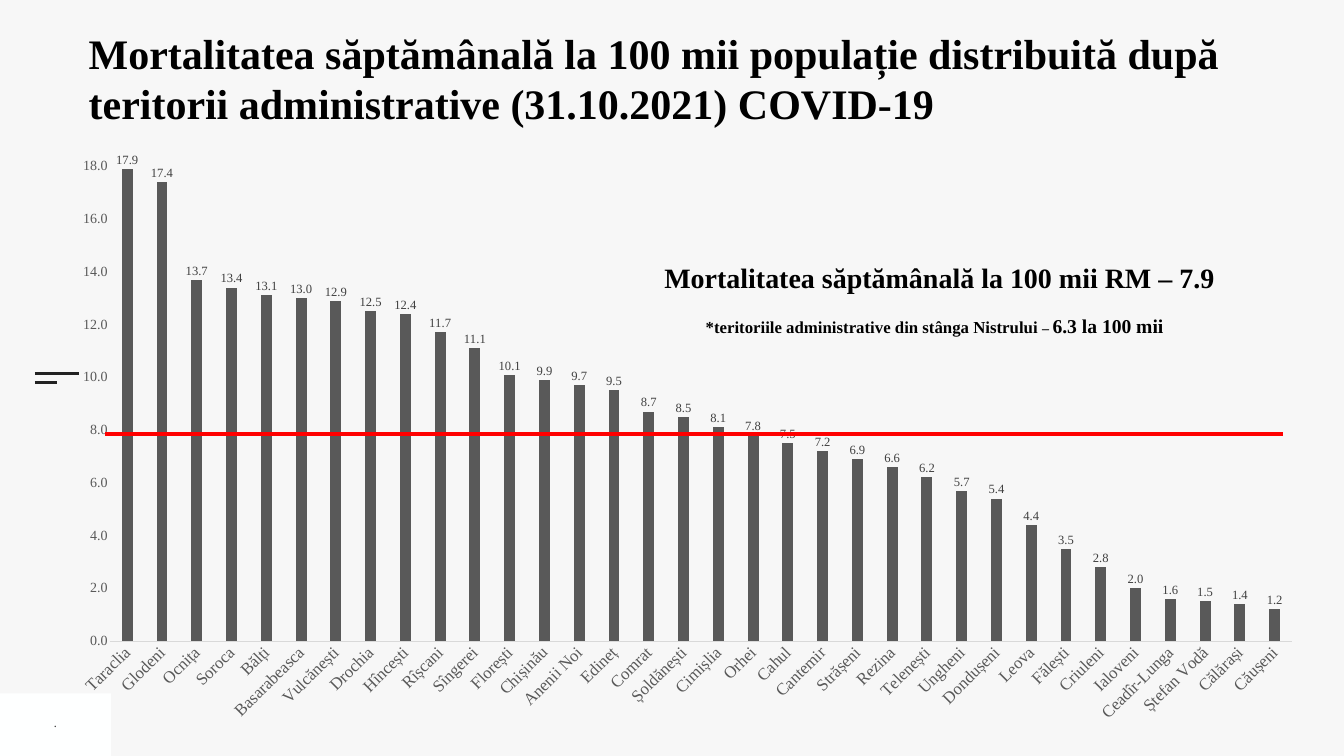
from dataclasses import dataclass

import lxml.etree
import pptx
import pptx.chart.data
import pptx.dml.color
import pptx.enum.chart
import pptx.enum.shapes
import pptx.enum.text
import pptx.oxml
import pptx.oxml.ns
import pptx.util
from pptx.util import Inches

COLORS = {
    "background": "F7F7F7", "corner": "FEFFFF", "mark": "222222",
    "text": "000000", "bar": "595959", "label": "404040",
    "axis": "D9D9D9", "average": "FF0000",
}
SERIF = "Times New Roman"
SANS = "Open Sans"


@dataclass
class Rule:
    left: float
    right: float
    y: float
    color: str
    width: float


@dataclass
class Run:
    text: str
    size: float


@dataclass
class Caption:
    left: float
    top: float
    width: float
    height: float
    runs: list[Run]
    wrap: bool = True
    font: str = SERIF
    color: str = "text"
    bold: bool = True
    inset: float = 0.05


RULES = [
    Rule(0.69, 1.57, 7.41, "mark", 3),
    Rule(0.69, 1.13, 7.59, "mark", 3),
]
AVERAGE = Rule(2.09, 25.46, 8.61, "average", 4.5)

CAPTIONS = [
    Caption(0.97, 14.11, 0.26, 0.47, [Run(".", 16)], False, SANS, "mark", False, 0.1),
    Caption(13.02, 5.12, 11.24, 0.77,
            [Run("Mortalitatea săptămânală la 100 mii RM – 7.9", 40)], False),
    Caption(11.88, 6.18, 13.33, 0.57, [
        Run("*teritoriile administrative din stânga Nistrului ", 24),
        Run("– ", 20),
        Run("6.3 la 100 mii", 28),
    ]),
]

MORTALITY = {
    "Taraclia": 17.9, "Glodeni": 17.4, "Ocnița": 13.7, "Soroca": 13.4,
    "Bălți": 13.1, "Basarabeasca": 13.0, "Vulcănești": 12.9, "Drochia": 12.5,
    "Hîncești": 12.4, "Rîșcani": 11.7, "Sîngerei": 11.1, "Florești": 10.1,
    "Chișinău": 9.9, "Anenii Noi": 9.7, "Edineț": 9.5, "Comrat": 8.7,
    "Șoldănești": 8.5, "Cimișlia": 8.1, "Orhei": 7.8, "Cahul": 7.5,
    "Cantemir": 7.2, "Strășeni": 6.9, "Rezina": 6.6, "Telenești": 6.2,
    "Ungheni": 5.7, "Dondușeni": 5.4, "Leova": 4.4, "Fălești": 3.5,
    "Criuleni": 2.8, "Ialoveni": 2.0, "Ceadîr-Lunga": 1.6,
    "Ștefan Vodă": 1.5, "Călărași": 1.4, "Căușeni": 1.2,
}


def rgb(name: str) -> pptx.dml.color.RGBColor:
    return pptx.dml.color.RGBColor.from_string(COLORS[name])


def set_font(font, size: float, color: str, name: str = SERIF, bold: bool = False) -> None:
    font.size = pptx.util.Pt(size)
    font.color.rgb = rgb(color)
    font.name = name
    font.bold = bold


def draw_rule(slide, rule: Rule) -> None:
    line = slide.shapes.add_connector(
        pptx.enum.shapes.MSO_CONNECTOR.STRAIGHT,
        Inches(rule.left), Inches(rule.y), Inches(rule.right), Inches(rule.y))
    line.line.color.rgb = rgb(rule.color)
    line.line.width = pptx.util.Pt(rule.width)
    sp_pr = line.element.find(pptx.oxml.ns.qn("p:spPr"))
    lxml.etree.SubElement(sp_pr, pptx.oxml.ns.qn("a:effectLst"))


def draw_caption(slide, caption: Caption) -> None:
    sp = slide.shapes.add_textbox(
        Inches(caption.left), Inches(caption.top),
        Inches(caption.width), Inches(caption.height))
    tf = sp.text_frame
    tf.word_wrap = caption.wrap
    tf.auto_size = pptx.enum.text.MSO_AUTO_SIZE.SHAPE_TO_FIT_TEXT
    tf.vertical_anchor = pptx.enum.text.MSO_ANCHOR.MIDDLE
    tf.margin_top = tf.margin_bottom = Inches(caption.inset)
    p = tf.paragraphs[0]
    p.alignment = pptx.enum.text.PP_ALIGN.CENTER
    set_font(p.font, caption.runs[0].size, caption.color, caption.font, caption.bold)
    for run in caption.runs:
        r = p.add_run()
        r.text = run.text
        r.font.size = pptx.util.Pt(run.size)


def draw_title(slide, text: str) -> None:
    sp = slide.shapes.title
    sp.left, sp.top = Inches(1.66), Inches(0.49)
    sp.width, sp.height = Inches(23.27), Inches(2.12)
    tf = sp.text_frame
    tf.text = text
    tf.word_wrap = True
    tf.auto_size = pptx.enum.text.MSO_AUTO_SIZE.NONE
    tf.vertical_anchor = pptx.enum.text.MSO_ANCHOR.TOP
    p = tf.paragraphs[0]
    p.alignment = pptx.enum.text.PP_ALIGN.LEFT
    set_font(p.font, 60, "text", bold=True)


def place_plot(chart, x: float, y: float, w: float, h: float) -> None:
    qn = pptx.oxml.ns.qn
    area = chart.element.find(f"{qn('c:chart')}/{qn('c:plotArea')}")
    for old in area.findall(qn("c:layout")):
        area.remove(old)
    area.insert(0, pptx.oxml.parse_xml(
        f'<c:layout {pptx.oxml.ns.nsdecls("c")}><c:manualLayout>'
        '<c:layoutTarget val="inner"/><c:xMode val="edge"/><c:yMode val="edge"/>'
        f'<c:x val="{x}"/><c:y val="{y}"/><c:w val="{w}"/><c:h val="{h}"/>'
        '</c:manualLayout></c:layout>'))
    body = area.find(f"{qn('c:catAx')}/{qn('c:txPr')}/{qn('a:bodyPr')}")
    body.set("rot", "-2700000")


def draw_chart(slide) -> None:
    data = pptx.chart.data.CategoryChartData(number_format="0.0")
    data.categories = list(MORTALITY)
    data.add_series("Series 1", list(MORTALITY.values()))
    chart = slide.shapes.add_chart(
        pptx.enum.chart.XL_CHART_TYPE.COLUMN_CLUSTERED,
        Inches(0.65), Inches(2.95), Inches(25.5), Inches(11.63), data).chart
    chart.has_legend = False
    chart.has_title = False
    set_font(chart.font, 24, "text")

    for axis, size in ((chart.category_axis, 24), (chart.value_axis, 20)):
        axis.major_tick_mark = pptx.enum.chart.XL_TICK_MARK.NONE
        axis.minor_tick_mark = pptx.enum.chart.XL_TICK_MARK.NONE
        axis.has_major_gridlines = False
        set_font(axis.tick_labels.font, size, "bar")
    chart.category_axis.format.line.color.rgb = rgb("axis")
    chart.category_axis.format.line.width = pptx.util.Pt(0.75)
    values = chart.value_axis
    values.format.line.fill.background()
    values.minimum_scale, values.maximum_scale, values.major_unit = 0, 18, 2
    values.tick_labels.number_format = "0.0"
    values.tick_labels.number_format_is_linked = False

    plot = chart.plots[0]
    plot.gap_width, plot.overlap = 219, -27
    plot.vary_by_categories = False
    fill = plot.series[0].format.fill
    fill.solid()
    fill.fore_color.rgb = rgb("bar")
    plot.has_data_labels = True
    labels = plot.data_labels
    labels.show_value = True
    labels.position = pptx.enum.chart.XL_LABEL_POSITION.OUTSIDE_END
    labels.number_format = "0.0"
    labels.number_format_is_linked = False
    set_font(labels.font, 18, "label")
    place_plot(chart, 0.06, 0.03, 0.92, 0.81)


def main() -> None:
    prs = pptx.Presentation()
    prs.slide_width, prs.slide_height = Inches(26.67), Inches(15)
    slide = prs.slides.add_slide(prs.slide_layouts[5])
    slide.background.fill.solid()
    slide.background.fill.fore_color.rgb = rgb("background")
    draw_title(slide, "Mortalitatea săptămânală la 100 mii populație distribuită după "
                      "teritorii administrative (31.10.2021) COVID-19")
    corner = slide.shapes.add_shape(
        pptx.enum.shapes.MSO_SHAPE.RECTANGLE, 0, Inches(13.76), Inches(2.2), Inches(1.24))
    corner.shadow.inherit = False
    corner.fill.solid()
    corner.fill.fore_color.rgb = rgb("corner")
    corner.line.fill.background()
    for rule in RULES:
        draw_rule(slide, rule)
    draw_chart(slide)
    draw_rule(slide, AVERAGE)
    for caption in CAPTIONS:
        draw_caption(slide, caption)
    prs.save("out.pptx")


if __name__ == "__main__":
    main()
